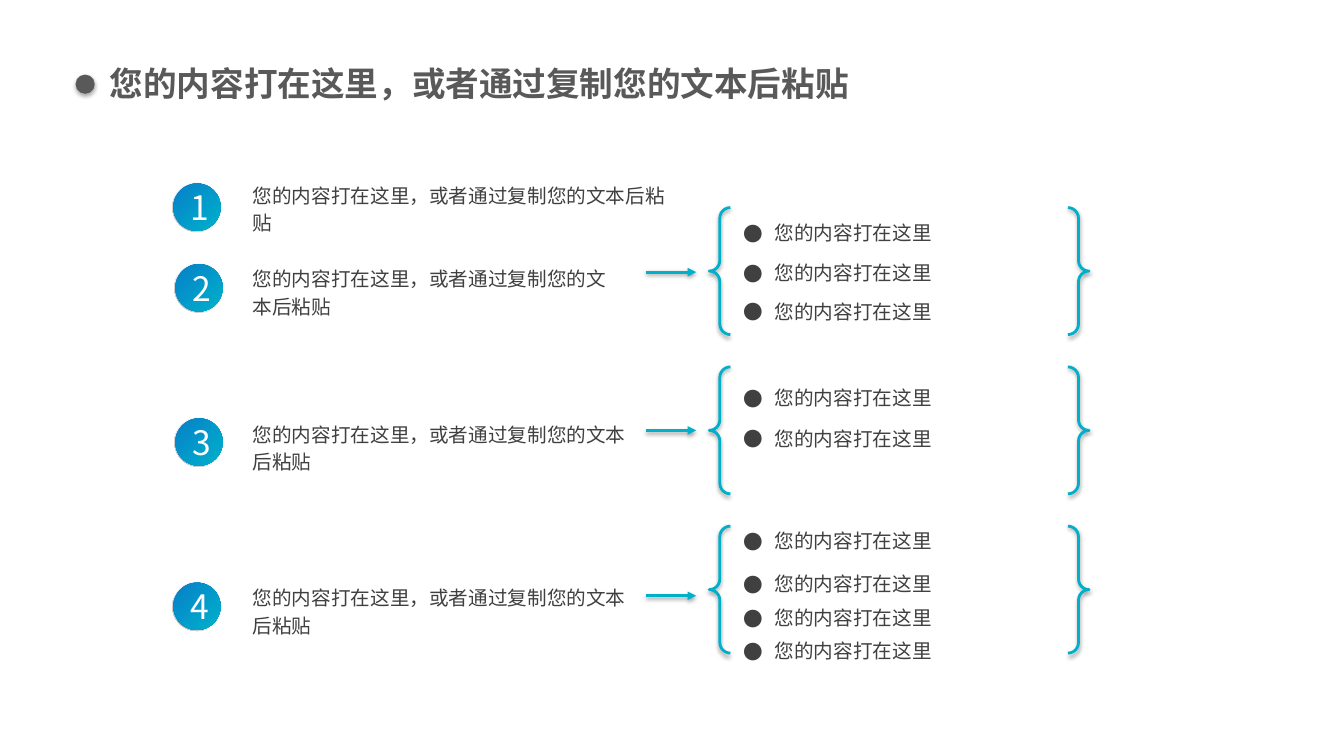
from lxml import etree
from pptx import Presentation
from pptx.dml.color import RGBColor
from pptx.enum import shapes, text
from pptx.oxml import ns
from pptx.util import Inches, Pt

FONT = "Noto Sans CJK SC"
PHRASE = "您的内容打在这里"
SENTENCE = PHRASE + "，或者通过复制您的文本后粘贴"
TEAL, GREY, DARK = "00B0CA", "595959", "404040"
RING = [(0, "FFFFFF"), (55, "F2F2F2"), (100, "A6A6A6")]
DISC = [(0, "067FC9"), (100, "00B2CA")]

# badge left, badge top, text top, text width
POINTS = [
    (1.71, 1.81, 1.73, 4.39),
    (1.73, 2.61, 2.56, 3.87),
    (1.73, 4.14, 4.10, 4.0),
    (1.71, 5.77, 5.72, 4.0),
]
# brace top, arrow height, list top, space before each item in points
BRACES = [
    (2.06, 2.70, 2.10, [0, 9, 7.5]),
    (3.64, 4.27, 3.74, [0, 9]),
    (5.22, 5.91, 5.16, [0, 10.5, 4.5, 4]),
]


def color(value):
    return RGBColor.from_string(value)


def child(parent, tag, **attrs):
    """Append a DrawingML element."""
    return etree.SubElement(parent, ns.qn("a:" + tag),
                            {k: str(v) for k, v in attrs.items()})


def box(left, top, width, height):
    return [Inches(v) for v in (left, top, width, height)]


def place(sp, left, top, width, height):
    sp.left, sp.top, sp.width, sp.height = box(left, top, width, height)


def style(p, size, fill, bold=False):
    p.font.name, p.font.size, p.font.bold = FONT, Pt(size), bold
    p.font.color.rgb = color(fill)
    child(p._p.pPr.find(ns.qn("a:defRPr")), "ea", typeface=FONT)


def frame(sp):
    """Prepare a wrapping, top-anchored text frame of fixed size."""
    tf = sp.text_frame
    tf.word_wrap = True
    tf.auto_size = text.MSO_AUTO_SIZE.NONE
    tf.vertical_anchor = text.MSO_ANCHOR.TOP
    return tf


def gradient(sp, stops, angle):
    geom = sp.element.spPr.find(ns.qn("a:prstGeom"))
    grad = etree.Element(ns.qn("a:gradFill"), rotWithShape="1")
    stop_list = child(grad, "gsLst")
    for pos, value in stops:
        child(child(stop_list, "gs", pos=pos * 1000), "srgbClr", val=value)
    child(grad, "lin", ang=angle * 60000, scaled=0)
    geom.addnext(grad)
    sp.line.fill.background()
    sp.shadow.inherit = False


def drop_shadow(sp, alpha, distance):
    effects = child(sp.element.spPr, "effectLst")
    shadow = child(effects, "outerShdw", blurRad=Pt(3.1), dist=Pt(distance),
                   dir=90 * 60000, rotWithShape=0)
    child(child(shadow, "srgbClr", val="000000"), "alpha", val=alpha * 1000)


def teal_line(sp):
    sp.line.color.rgb = color(TEAL)
    sp.line.width = Pt(2)


def add_title(slide):
    sp = slide.shapes.title
    place(sp, 0.99, 0.57, 8.91, 0.5)
    p = frame(sp).paragraphs[0]
    p.text = SENTENCE
    p.alignment = text.PP_ALIGN.LEFT
    style(p, 24, GREY, bold=True)
    dot = slide.shapes.add_shape(shapes.MSO_SHAPE.OVAL, *box(0.75, 0.74, 0.19, 0.19))
    dot.fill.solid()
    dot.fill.fore_color.rgb = color(GREY)
    dot.line.fill.background()
    drop_shadow(dot, 35, 1.8)


def add_badge(slide, number, left, top):
    group = slide.shapes.add_group_shape()
    ring = group.shapes.add_shape(shapes.MSO_SHAPE.DONUT, *box(left, top, 0.49, 0.49))
    ring.adjustments[0] = 0.049
    gradient(ring, RING, 135)
    disc = group.shapes.add_shape(
        shapes.MSO_SHAPE.OVAL, *box(left + 0.01, top + 0.01, 0.47, 0.47))
    gradient(disc, DISC, 45)
    tf = disc.text_frame
    tf.vertical_anchor = text.MSO_ANCHOR.MIDDLE
    p = tf.paragraphs[0]
    p.text = str(number)
    p.alignment = text.PP_ALIGN.CENTER
    style(p, 24, "FFFFFF")


def add_sentence(slide, top, width):
    sp = slide.shapes.add_textbox(*box(2.41, top, width, 0.66))
    p = frame(sp).paragraphs[0]
    p.text = SENTENCE
    p.line_spacing = Pt(19.8)
    style(p, 14, DARK)


def fill_list(sp, top, gaps):
    place(sp, 7.28, top, 3.53, 0.36 + 0.4 * (len(gaps) - 1))
    tf = frame(sp)
    for i, gap in enumerate(gaps):
        p = tf.add_paragraph() if i else tf.paragraphs[0]
        p.text = PHRASE
        p.alignment = text.PP_ALIGN.LEFT
        p.line_spacing = Pt(19.8)
        p.space_before = Pt(gap)
        pPr = p._p.get_or_add_pPr()
        pPr.set("marL", str(Inches(0.31)))
        pPr.set("indent", str(-Inches(0.31)))
        child(pPr, "buFont", typeface=FONT)
        child(pPr, "buChar", char="●")
        style(p, 14, DARK)


def add_braces(slide, top):
    sp = slide.shapes.add_shape(shapes.MSO_SHAPE.DOUBLE_BRACE, *box(7.04, top, 3.77, 1.26))
    sp.fill.background()
    teal_line(sp)
    drop_shadow(sp, 38, 1.6)


def add_arrow(slide, y):
    line = slide.shapes.add_connector(
        shapes.MSO_CONNECTOR.STRAIGHT, *box(6.41, y, 6.91, y))
    teal_line(line)
    child(line.line._get_or_add_ln(), "tailEnd", type="triangle")
    drop_shadow(line, 38, 1.6)


def main():
    prs = Presentation()
    prs.slide_width, prs.slide_height = Inches(13.34), Inches(7.5)
    slide = prs.slides.add_slide(prs.slide_layouts.get_by_name("Comparison"))
    add_title(slide)
    *bodies, spare = list(slide.placeholders)[1:]
    spare.element.getparent().remove(spare.element)

    for number, (left, top, text_top, width) in enumerate(POINTS, 1):
        add_badge(slide, number, left, top)
        add_sentence(slide, text_top, width)
    for body, (top, arrow_y, list_top, gaps) in zip(bodies, BRACES):
        fill_list(body, list_top, gaps)
        add_braces(slide, top)
        add_arrow(slide, arrow_y)
    prs.save("out.pptx")


if __name__ == "__main__":
    main()
